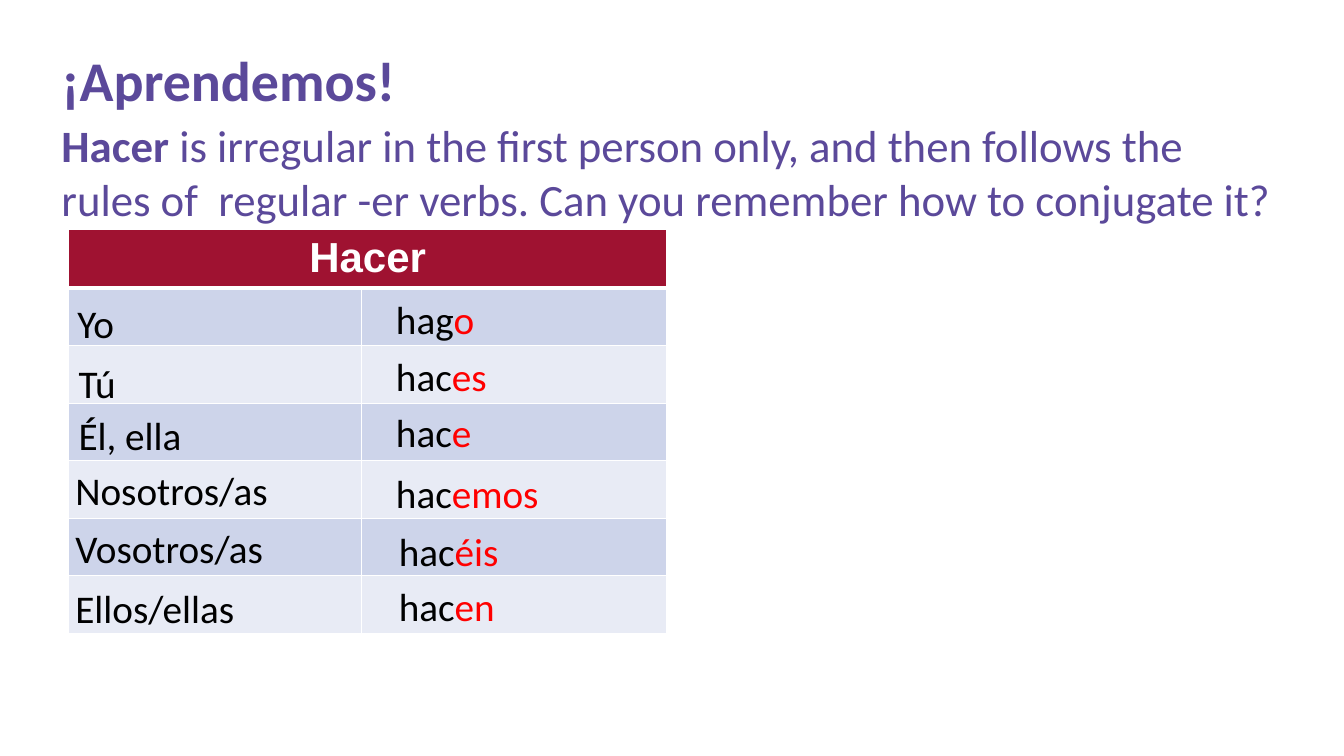
"""Build a slide that teaches the present tense of the verb hacer."""
from dataclasses import dataclass

from lxml.etree import SubElement
from pptx import Presentation
from pptx.dml.color import RGBColor
from pptx.enum.text import MSO_AUTO_SIZE, PP_ALIGN
from pptx.oxml.ns import qn
from pptx.util import Cm, Pt


@dataclass(frozen=True)
class Theme:
    purple: str = "5B499A"
    crimson: str = "9F1231"
    bands: tuple = ("CDD4EA", "E8EBF5")
    white: str = "FFFFFF"
    black: str = "000000"
    red: str = "FF0000"
    body_font: str = "Calibri"
    header_font: str = "Arial"
    title_size: int = 40
    intro_size: int = 32
    header_size: int = 30
    verb_size: int = 28


theme = Theme()


def add_text(left, top, width, height, size, runs, grow=False):
    """Add a one-paragraph text box from (text, colour, bold) runs."""
    shape = slide.shapes.add_textbox(Cm(left), Cm(top), Cm(width), Cm(height))
    frame = shape.text_frame
    frame.word_wrap = True
    frame.auto_size = MSO_AUTO_SIZE.SHAPE_TO_FIT_TEXT if grow else MSO_AUTO_SIZE.NONE
    paragraph = frame.paragraphs[0]
    paragraph.font.name = theme.body_font
    paragraph.font.size = Pt(size)
    for text, colour, bold in runs:
        run = paragraph.add_run()
        run.text = text
        run.font.bold = bold
        run.font.color.rgb = RGBColor.from_string(colour)


def style_cell(cell, fill, bottom_width):
    """Give a cell its fill and white borders."""
    properties = cell._tc.get_or_add_tcPr()
    for side, width in (("L", 1), ("R", 1), ("T", 1), ("B", bottom_width)):
        border = SubElement(properties, qn(f"a:ln{side}"), w=str(Pt(width)))
        border_fill = SubElement(border, qn("a:solidFill"))
        SubElement(border_fill, qn("a:srgbClr"), val=theme.white)
    cell.fill.solid()
    cell.fill.fore_color.rgb = RGBColor.from_string(fill)


presentation = Presentation()
presentation.slide_width = Cm(33.87)
presentation.slide_height = Cm(19.05)
slide = presentation.slides.add_slide(presentation.slide_layouts[6])

conjugation = [
    ("Yo", 1.7, 7.42, "hag", "o", 9.73, 7.32),
    ("Tú", 1.73, 8.92, "hac", "es", 9.73, 8.76),
    ("Él, ella", 1.73, 10.24, "hac", "e", 9.73, 10.16),
    ("Nosotros/as", 1.65, 11.63, "hac", "emos", 9.73, 11.71),
    ("Vosotros/as", 1.65, 13.08, "hac", "éis", 9.8, 13.16),
    ("Ellos/ellas", 1.65, 14.61, "hac", "en", 9.8, 14.55),
]

table = slide.shapes.add_table(
    len(conjugation) + 1, 2, Cm(1.73), Cm(5.79), Cm(15.07), Cm(10.17)
).table
table.columns[0].width = Cm(7.37)
table.columns[1].width = Cm(7.7)
for row_number, row in enumerate(table.rows):
    is_header = row_number == 0
    row.height = Cm(1.47 if is_header else 1.45)
    fill = theme.crimson if is_header else theme.bands[(row_number - 1) % 2]
    for cell in row.cells:
        style_cell(cell, fill, 3 if is_header else 1)

header = table.cell(0, 0)
header.merge(table.cell(0, 1))
header.margin_left = header.margin_right = Cm(0.2)
header.text = "Hacer"
paragraph = header.text_frame.paragraphs[0]
paragraph.alignment = PP_ALIGN.CENTER
paragraph.font.name = theme.header_font
paragraph.font.size = Pt(theme.header_size)
paragraph.font.bold = True
paragraph.font.color.rgb = RGBColor.from_string(theme.white)

for pronoun, pronoun_left, pronoun_top, stem, ending, verb_left, verb_top in conjugation:
    add_text(pronoun_left, pronoun_top, 6.8, 1.45, theme.verb_size,
             [(pronoun, theme.black, False)], grow=True)
    add_text(verb_left, verb_top, 5.38, 1.45, theme.verb_size,
             [(stem, theme.black, False), (ending, theme.red, False)], grow=True)

add_text(1.3, 1.02, 29.21, 1.73, theme.title_size, [("¡Aprendemos!", theme.purple, True)])
add_text(1.3, 2.84, 31.17, 3.12, theme.intro_size, [
    ("Hacer ", theme.purple, True),
    ("is irregular in the first person only, and then follows the rules of  regular "
     "-er verbs. Can you remember how to conjugate it?", theme.purple, False),
])

presentation.save("out.pptx")
